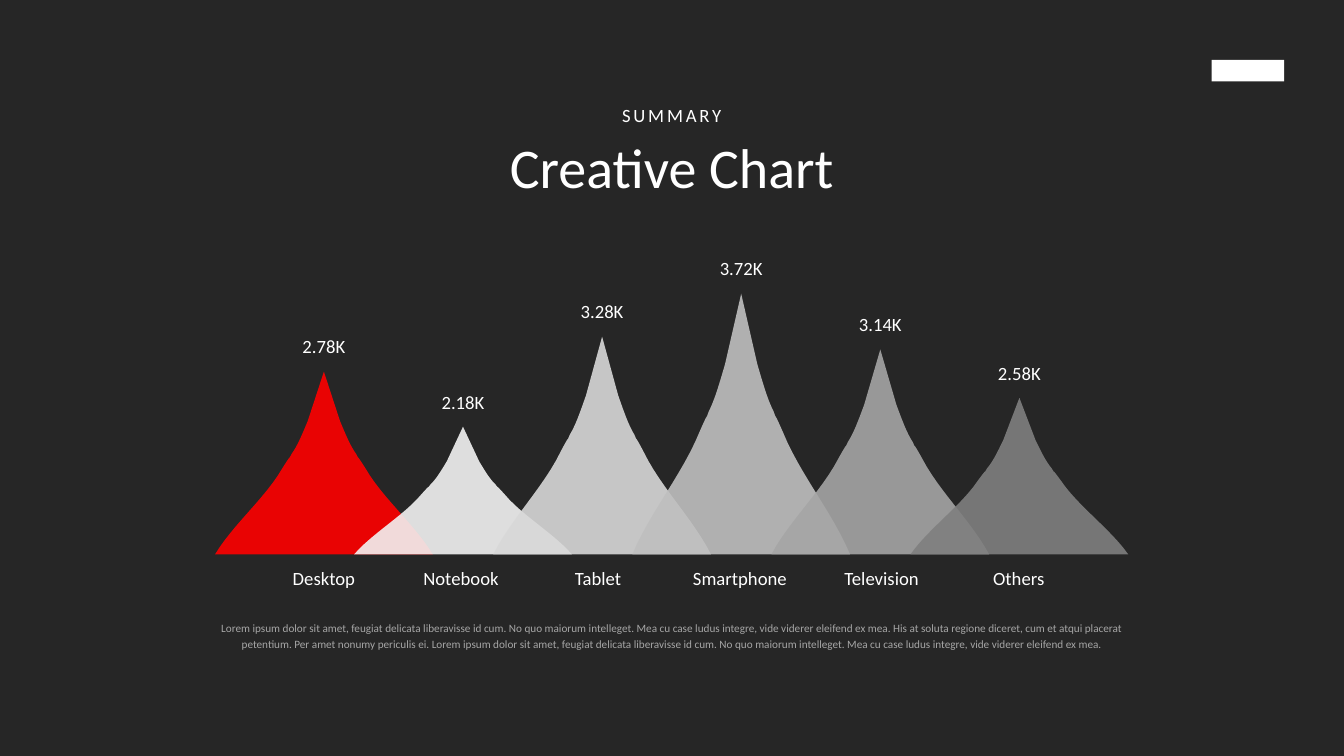
"""Build a slide with six overlapping peaks that compare device figures."""
from lxml import etree
from pptx import Presentation
from pptx import util as u
from pptx.dml import color
from pptx.enum import shapes, text
from pptx.oxml import ns

deck = Presentation()
deck.slide_width, deck.slide_height = u.Inches(20), u.Inches(11.25)
CELL = deck.slide_width // 20
page = deck.slides.add_slide(deck.slide_layouts[6])


def paint(fill, shade):
    fill.solid()
    fill.fore_color.rgb = color.RGBColor.from_string(shade)


def write(column, row, columns, rows, lines):
    box = page.shapes.add_textbox(*(round(CELL * n) for n in (column, row, columns, rows)))
    frame = box.text_frame
    frame.word_wrap = True
    frame.auto_size = text.MSO_AUTO_SIZE.SHAPE_TO_FIT_TEXT
    for number, (words, size, shade, layout) in enumerate(lines):
        para = frame.add_paragraph() if number else frame.paragraphs[0]
        span = para.add_run()
        span.text = words
        for name, value in {"alignment": text.PP_ALIGN.CENTER, **layout}.items():
            setattr(para, name, value)
        for name, value in {"name": "Calibri", "size": u.Pt(size)}.items():
            setattr(span.font, name, value)
        paint(span.font.fill, shade)
    return box


paint(page.background.fill, "262626")

badge = page.shapes.add_shape(
    shapes.MSO_SHAPE.RECTANGLE, *(round(CELL * n) for n in (18.03, 0.89, 1.08, 0.32)))
badge.shadow.inherit = False
badge.line.fill.background()
paint(badge.fill, "FFFFFF")

# Each curve: two control points and an end, as (columns from the axis, share of height).
flank = [(0, 0), (0.24, 0.27)]
for curve in (
    ((0.33, 0.35), (0.4, 0.41), (0.48, 0.45)),
    ((0.55, 0.5), (0.45, 0.43), (0.62, 0.53)),
    ((0.87, 0.69), (1.36, 0.84), (1.62, 1)),
):
    knots = (flank[-1], *curve)
    for step in range(1, 13):
        t = step / 12
        weights = ((1 - t) ** 3, 3 * t * (1 - t) ** 2, 3 * t * t * (1 - t), t ** 3)
        flank.append(tuple(sum(w * knot[axis] for w, knot in zip(weights, knots))
                           for axis in (0, 1)))
outline = flank + [(-x, y) for x, y in reversed(flank[1:])]

devices = [
    ("Desktop", "2.78K", 2.72, "FF0000", 1.84),
    ("Notebook", "2.18K", 1.9, "F2F2F2", 1.84),
    ("Tablet", "3.28K", 3.24, "D8D8D8", 1.84),
    ("Smartphone", "3.72K", 3.88, "BFBFBF", 1.98),
    ("Television", "3.14K", 3.05, "A5A5A5", 1.84),
    ("Others", "2.58K", 2.33, "7F7F7F", 1.84),
]
FIRST_AXIS, PITCH, BASE = 4.82, 2.07, 8.25

for number, (_, _, height, shade, _) in enumerate(devices):
    axis = FIRST_AXIS + PITCH * number
    points = [(CELL * (axis + x), CELL * (BASE - height + height * y)) for x, y in outline]
    builder = page.shapes.build_freeform(*points[0])
    builder.add_line_segments(points[1:], close=True)
    peak = builder.convert_to_shape()
    peak.shadow.inherit = False
    peak.line.fill.background()
    paint(peak.fill, shade)
    tint = peak.fill._xPr.find(".//" + ns.qn("a:srgbClr"))
    etree.SubElement(tint, ns.qn("a:alpha")).set("val", "90000")

label_left = 3.9
for number, (device, value, height, _, columns) in enumerate(devices):
    write(label_left, 8.38, columns, 0.44, [(device, 20, "FFFFFF", {})])
    label_left += columns + 0.2
    write(FIRST_AXIS + PITCH * number - 1, BASE - height - 0.59, 2, 0.44,
          [(value, 20, "FFFFFF", {})])

write(3.15, 9.16, 13.71, 0.83, [(
    "Lorem ipsum dolor sit amet, feugiat delicata liberavisse id cum. No quo maiorum intelleget. "
    "Mea cu case ludus integre, vide viderer eleifend ex mea. His at soluta regione diceret, "
    "cum et atqui placerat petentium. Per amet nonumy periculis ei. Lorem ipsum dolor sit amet, "
    "feugiat delicata liberavisse id cum. No quo maiorum intelleget. Mea cu case ludus integre, "
    "vide viderer eleifend ex mea.",
    12, "A6A6A6", {"line_spacing": 1.2, "space_before": u.Pt(12)})])

heading = write(5.97, 1.5, 8.05, 1.53, [
    ("SUMMARY", 20, "FFFFFF", {"space_before": u.Pt(12)}),
    ("Creative Chart", 60, "FFFFFF", {"space_before": u.Pt(6)}),
])
heading.text_frame.paragraphs[0].runs[0]._r.get_or_add_rPr().set("spc", "300")

deck.save("out.pptx")
